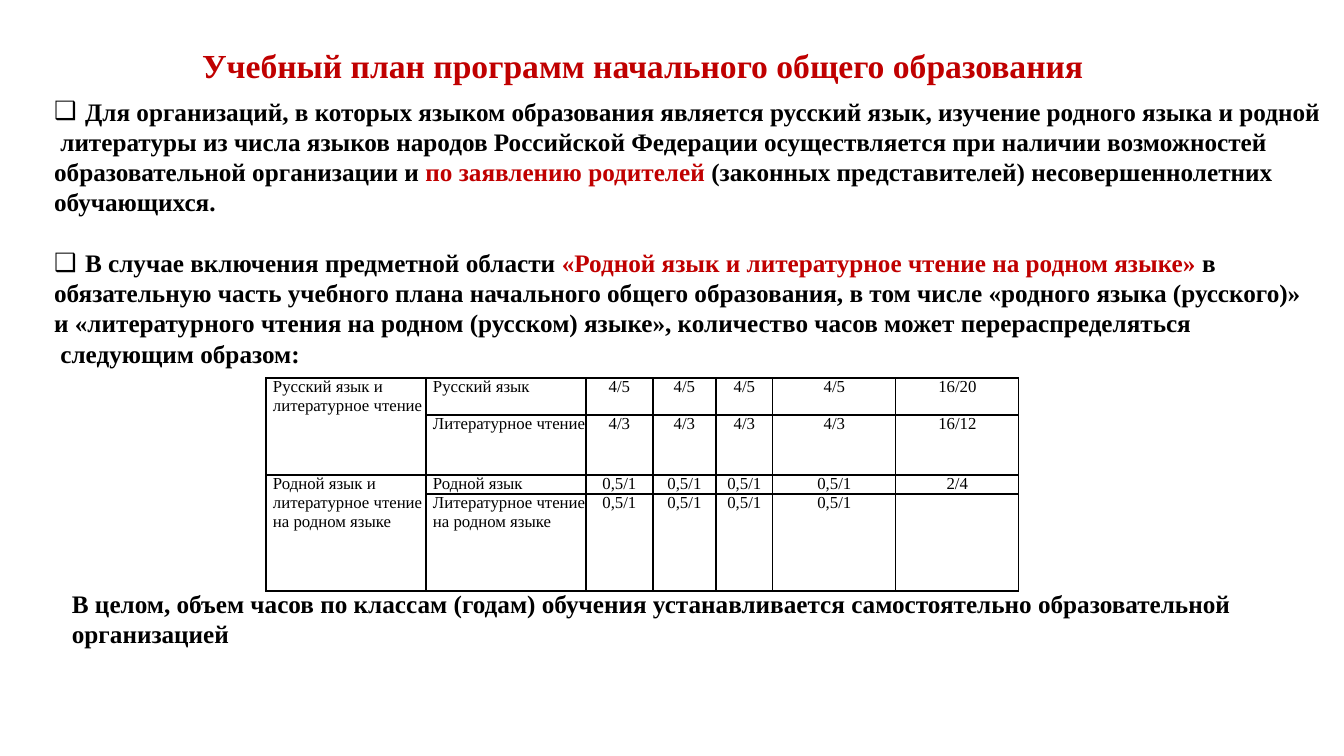
from dataclasses import dataclass

from pptx import Presentation
from pptx.dml.color import RGBColor
from pptx.enum.text import MSO_ANCHOR, MSO_AUTO_SIZE, PP_ALIGN
from pptx.oxml import parse_xml
from pptx.oxml.ns import nsdecls
from pptx.util import Emu, Pt

EMU_PER_PX = 12192000 / 1344


@dataclass(frozen=True)
class Theme:
    font: str = "Times New Roman"
    ink: RGBColor = RGBColor(0, 0, 0)
    accent: RGBColor = RGBColor(0xC0, 0, 0)
    title_size: int = 24
    body_size: int = 18
    table_size: int = 12
    line_spacing: float = 1.2


theme = Theme()


def px(length):
    return Emu(round(length * EMU_PER_PX))


def style(paragraph, size, bold=True, color=theme.ink):
    paragraph.font.name = theme.font
    paragraph.font.size = Pt(size)
    paragraph.font.bold = bold
    paragraph.font.color.rgb = color
    if bold:
        paragraph.line_spacing = Pt(size * theme.line_spacing)
        paragraph.space_before = Pt(0)


presentation = Presentation()
presentation.slide_width, presentation.slide_height = px(1344), px(756)
slide = presentation.slides.add_slide(presentation.slide_layouts[1])

# Title and body placeholders, closing text box
title, body = slide.shapes.title, slide.placeholders[1]
closing = slide.shapes.add_textbox(px(62), px(583), px(1211), px(72))
for shape, box in ((title, (192, 40, 1022, 50)), (body, (44, 91, 1300, 315))):
    shape.left, shape.top, shape.width, shape.height = map(px, box)
for shape in (title, body, closing):
    shape.text_frame.word_wrap = True
    shape.text_frame.auto_size = MSO_AUTO_SIZE.NONE
    shape.text_frame.vertical_anchor = MSO_ANCHOR.TOP

heading = title.text_frame.paragraphs[0]
heading.text = "Учебный план программ начального общего образования"
heading.alignment = PP_ALIGN.LEFT
style(heading, theme.title_size, color=theme.accent)

# Body: each point is a list of lines, each line a list of (text, is accented)
points = [
    [
        [("Для организаций, в которых языком образования является русский язык, "
          "изучение родного языка и родной", False)],
        [(" литературы из числа языков народов Российской Федерации "
          "осуществляется при наличии возможностей", False)],
        [("образовательной организации и ", False),
         ("по заявлению родителей ", True),
         ("(законных представителей) несовершеннолетних", False)],
        [("обучающихся.", False)],
    ],
    [
        [("В случае включения предметной области ", False),
         ("«Родной язык и литературное чтение на родном языке» ", True),
         ("в", False)],
        [("обязательную часть учебного плана начального общего образования, "
          "в том числе «родного языка (русского)»", False)],
        [("и «литературного чтения на родном (русском) языке», "
          "количество часов может перераспределяться", False)],
        [(" следующим образом:", False)],
    ],
]
frame = body.text_frame
for point_index, lines in enumerate(points):
    for line_index, parts in enumerate(lines):
        is_first = point_index == line_index == 0
        paragraph = frame.paragraphs[0] if is_first else frame.add_paragraph()
        style(paragraph, theme.body_size)
        for text, is_accented in parts:
            run = paragraph.add_run()
            run.text = text
            if is_accented:
                run.font.color.rgb = theme.accent
        starts_point = line_index == 0
        if starts_point and point_index:
            paragraph.space_before = Pt(theme.body_size * theme.line_spacing)
        indent = px(31) if starts_point else 0
        properties = paragraph._p.get_or_add_pPr()
        properties.set("marL", str(indent))
        properties.set("indent", str(-indent))
        bullet = '<a:buChar {} char="❑"/>' if starts_point else "<a:buNone {}/>"
        properties.append(parse_xml(bullet.format(nsdecls("a"))))

# Table of weekly hours
column_widths = [160, 160, 67, 63, 57, 123, 123]
row_heights = [37, 60, 19, 97]
rows = [
    ["Русский язык и литературное чтение", "Русский язык", *["4/5"] * 4, "16/20"],
    ["", "Литературное чтение", *["4/3"] * 4, "16/12"],
    ["Родной язык и литературное чтение на родном языке", "Родной язык",
     *["0,5/1"] * 4, "2/4"],
    ["", "Литературное чтение на родном языке", *["0,5/1"] * 4, ""],
]
table = slide.shapes.add_table(
    len(rows), len(column_widths), px(266), px(378),
    px(sum(column_widths)), px(sum(row_heights))).table
table.first_row = table.horz_banding = False
for column, width in zip(table.columns, column_widths):
    column.width = px(width)
for row, height in zip(table.rows, row_heights):
    row.height = px(height)

for row_index, values in enumerate(rows):
    for column_index, value in enumerate(values):
        cell = table.cell(row_index, column_index)
        is_label = column_index < 2
        cell.margin_left = px(7 if is_label else 0)
        cell.margin_right = cell.margin_top = cell.margin_bottom = 0
        paragraph = cell.text_frame.paragraphs[0]
        paragraph.text = value
        paragraph.alignment = PP_ALIGN.LEFT if is_label else PP_ALIGN.CENTER
        style(paragraph, theme.table_size, bold=False)
        for side in ("lnL", "lnR", "lnT", "lnB"):
            cell._tc.get_or_add_tcPr().append(parse_xml(
                f'<a:{side} {nsdecls("a")} w="{Pt(1)}"><a:solidFill>'
                f'<a:srgbClr val="{theme.ink}"/></a:solidFill></a:{side}>'))
        cell.fill.background()
for top_row in (0, 2):
    table.cell(top_row, 0).merge(table.cell(top_row + 1, 0))

# Closing remark
remark = closing.text_frame.paragraphs[0]
remark.text = ("В целом, объем часов по классам (годам) обучения устанавливается "
               "самостоятельно образовательной организацией")
style(remark, theme.body_size)

presentation.save("out.pptx")
